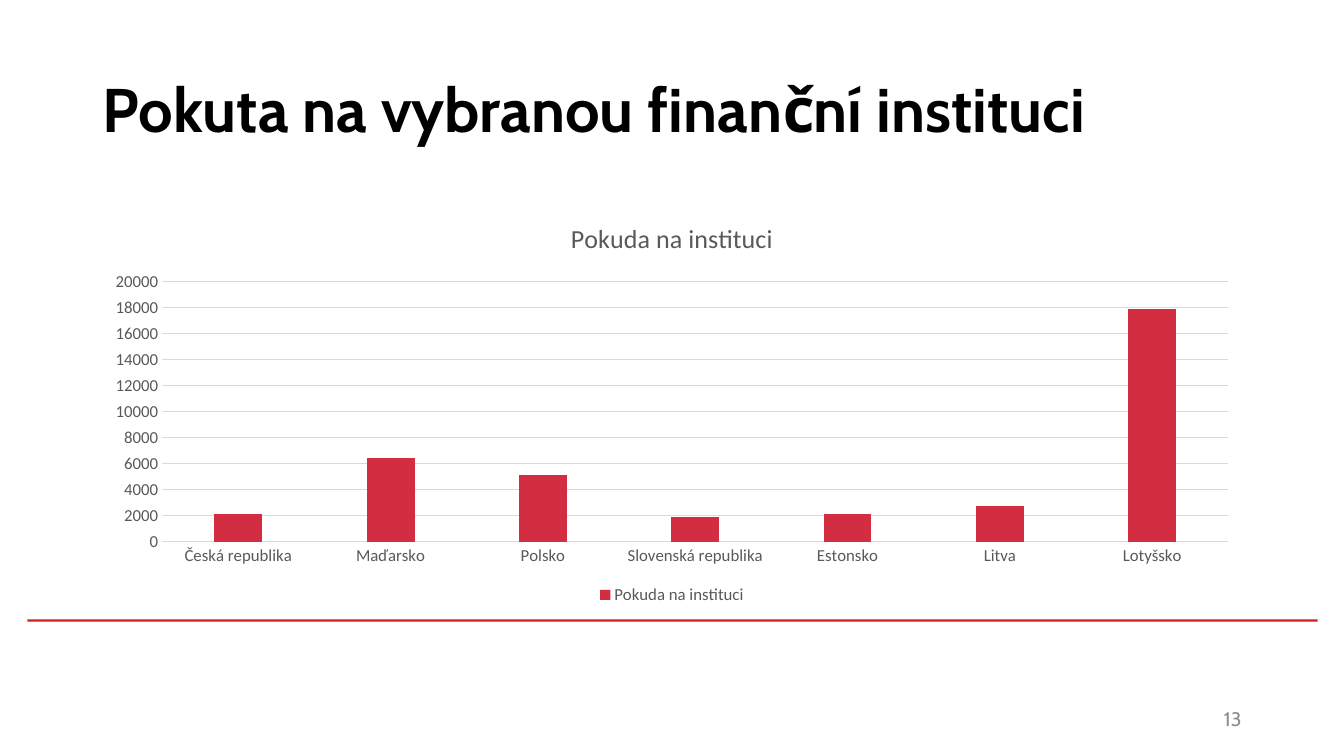
from pptx import Presentation
from pptx.chart.data import CategoryChartData
from pptx.dml.color import RGBColor
from pptx.enum.chart import XL_CHART_TYPE, XL_LEGEND_POSITION, XL_TICK_MARK
from pptx.enum.shapes import MSO_SHAPE
from pptx.enum.text import MSO_ANCHOR, PP_ALIGN
from pptx.util import Pt

PX = 9525
COLUMNS = XL_CHART_TYPE.COLUMN_CLUSTERED
BOTTOM = XL_LEGEND_POSITION.BOTTOM
NO_TICK = XL_TICK_MARK.NONE
RECTANGLE = MSO_SHAPE.RECTANGLE
MIDDLE = MSO_ANCHOR.MIDDLE
LEFT, RIGHT = PP_ALIGN.LEFT, PP_ALIGN.RIGHT

BLACK = RGBColor(0x00, 0x00, 0x00)
GREY = RGBColor(0x8C, 0x8C, 0x8C)
LABEL = RGBColor(0x59, 0x59, 0x59)
GRID = RGBColor(0xD9, 0xD9, 0xD9)
RULE = RGBColor(0xCD, 0x1F, 0x21)
BAR = RGBColor(0xD2, 0x2D, 0x40)

TITLE_FONT = {"name": "Cabin", "size": Pt(44), "bold": True}
NUMBER_FONT = {"name": "Cabin", "size": Pt(14), "bold": False}
CHART_FONT = {"name": "Calibri", "size": Pt(12), "bold": False}
CHART_TITLE_FONT = {"name": "Calibri", "size": Pt(18.6), "bold": False}

FINES = {
    "Česká republika": 2100,
    "Maďarsko": 6400,
    "Polsko": 5100,
    "Slovenská republika": 1900,
    "Estonsko": 2100,
    "Litva": 2700,
    "Lotyšsko": 17900,
}


def px(*lengths):
    """Turn pixel lengths into EMU."""
    return [length * PX for length in lengths]


def set_font(font, formats, color):
    """Apply a dict of format values and a colour to a font."""
    for name, value in formats.items():
        setattr(font, name, value)
    font.color.rgb = color


def set_line(line, color):
    """Give a chart line its colour and thin width."""
    line.color.rgb = color
    line.width = Pt(0.75)


def write(shape, text, formats, color, align):
    """Write one vertically centred paragraph into a shape."""
    tf = shape.text_frame
    tf.word_wrap = True
    tf.vertical_anchor = MIDDLE
    p = tf.paragraphs[0]
    p.alignment = align
    p.line_spacing = 0.9
    r = p.add_run()
    r.text = text
    set_font(r.font, formats, color)


def add_title(s, box, text):
    """Move the title placeholder to its box and fill it."""
    title = s.shapes.title
    title.left, title.top, title.width, title.height = px(*box)
    write(title, text, TITLE_FONT, BLACK, LEFT)


def add_fine_chart(s, box, name, fines):
    """Add the column chart of fines by country."""
    data = CategoryChartData()
    data.categories = list(fines)
    data.add_series(name, list(fines.values()))
    chart = s.shapes.add_chart(COLUMNS, *px(*box), data).chart
    set_font(chart.font, CHART_FONT, LABEL)

    chart.has_title = True
    p = chart.chart_title.text_frame.paragraphs[0]
    r = p.add_run()
    r.text = name
    set_font(r.font, CHART_TITLE_FONT, LABEL)
    chart.chart_title.include_in_layout = False

    chart.has_legend = True
    chart.legend.position = BOTTOM
    chart.legend.include_in_layout = False
    set_font(chart.legend.font, CHART_FONT, LABEL)

    for axis in (chart.category_axis, chart.value_axis):
        axis.major_tick_mark = NO_TICK
        axis.minor_tick_mark = NO_TICK
        set_font(axis.tick_labels.font, CHART_FONT, LABEL)
    set_line(chart.category_axis.format.line, GRID)
    values = chart.value_axis
    values.minimum_scale, values.maximum_scale, values.major_unit = 0, 20000, 2000
    values.format.line.fill.background()
    set_line(values.major_gridlines.format.line, GRID)

    plot = chart.plots[0]
    plot.gap_width = 219
    plot.overlap = -27
    plot.vary_by_categories = False
    fill = plot.series[0].format.fill
    fill.solid()
    fill.fore_color.rgb = BAR


def add_footer(s, box, number):
    """Add the red rule and the slide number below it."""
    left, top, width, height = box
    rule = s.shapes.add_shape(RECTANGLE, *px(left, top, width, 2))
    rule.shadow.inherit = False
    rule.fill.solid()
    rule.fill.fore_color.rgb = RULE
    rule.line.fill.background()
    number_box = s.shapes.add_textbox(*px(left + 878, top + height - 38, 288, 38))
    write(number_box, number, NUMBER_FONT, GREY, RIGHT)


def main():
    """Build the slide and save it."""
    prs = Presentation()
    prs.slide_width, prs.slide_height = px(1280, 720)
    s = prs.slides.add_slide(prs.slide_layouts[5])
    add_footer(s, (26, 590, 1229, 115), "13")
    add_title(s, (88, 38, 1104, 139), "Pokuta na vybranou finanční instituci")
    add_fine_chart(s, (88, 192, 1104, 388), "Pokuda na instituci", FINES)
    prs.save("out.pptx")


if __name__ == "__main__":
    main()
